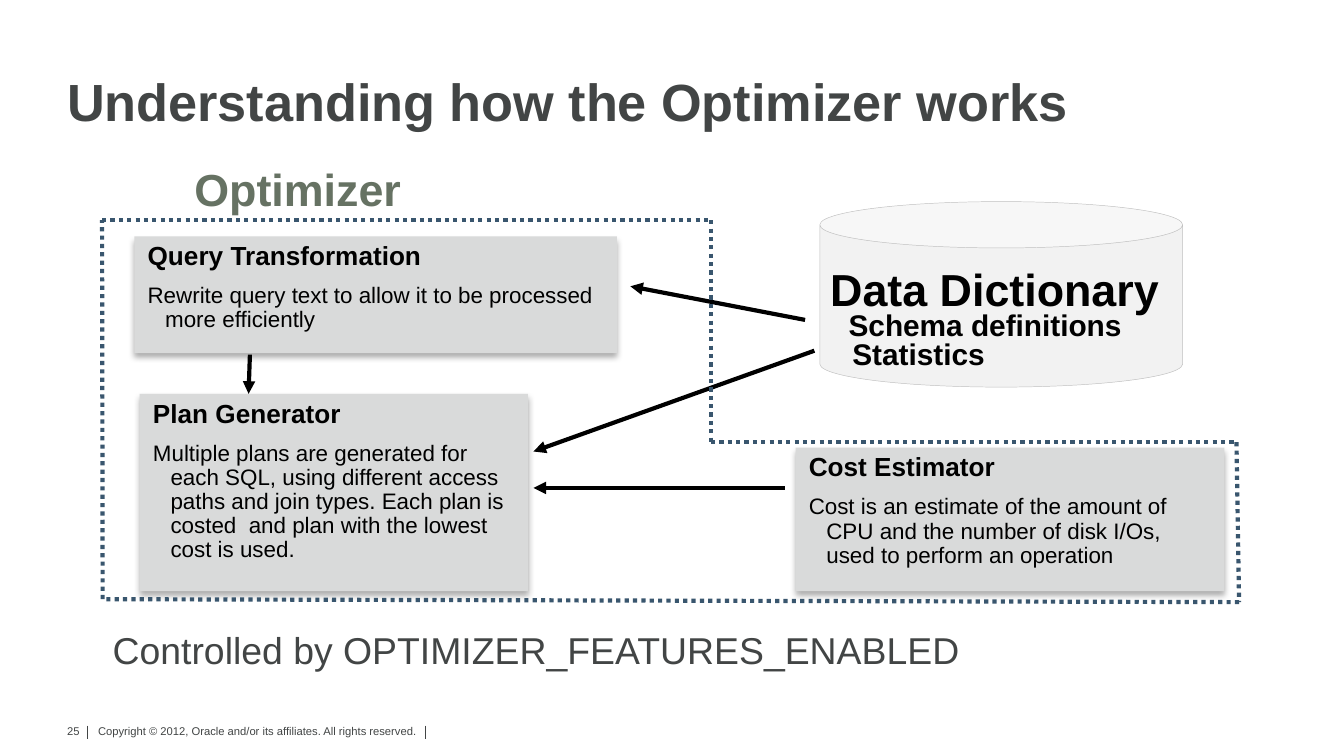
import itertools

import lxml.etree
import pptx
import pptx.dml.color
import pptx.enum.dml
import pptx.enum.shapes
import pptx.enum.text
import pptx.oxml
import pptx.oxml.ns
import pptx.util

Pt = pptx.util.Pt
RGBColor = pptx.dml.color.RGBColor
Align = pptx.enum.text.PP_ALIGN
Anchor = pptx.enum.text.MSO_ANCHOR
Shape = pptx.enum.shapes.MSO_SHAPE
qn = pptx.oxml.ns.qn

BLACK = RGBColor(0x00, 0x00, 0x00)
DARK_GRAY = RGBColor(0x42, 0x45, 0x45)
PANEL_GRAY = RGBColor(0xD9, 0xDA, 0xDA)
CAN_GRAY = RGBColor(0xC0, 0xC0, 0xC0)
SAGE = RGBColor(0x66, 0x72, 0x63)
BORDER_BLUE = RGBColor(0x39, 0x56, 0x6E)

SHADOW = (
    '<a:effectLst xmlns:a="http://schemas.openxmlformats.org/drawingml/2006/main">'
    '<a:outerShdw blurRad="44450" dist="27940" dir="5400000" rotWithShape="0">'
    '<a:srgbClr val="000000"><a:alpha val="32000"/></a:srgbClr>'
    "</a:outerShdw></a:effectLst>"
)

STEPS = [
    ((72, 126.7, 258.5, 62.6), "Query Transformation",
     "Rewrite query text to allow it to be processed more efficiently"),
    ((74.9, 211, 208, 105.8), "Plan Generator",
     "Multiple plans are generated for each SQL, using different access paths "
     "and join types. Each plan is costed  and plan with the lowest cost is used."),
    ((426.2, 239.8, 229.7, 77), "Cost Estimator",
     "Cost is an estimate of the amount of CPU and the number of disk I/Os, "
     "used to perform an operation"),
]
ARROWS = [
    ((133.9, 190), (133.2, 211)),
    ((420.5, 261.4), (285.8, 261.4)),
    ((436.3, 187.9), (285.8, 241.9)),
    ((431.3, 171.4), (337.7, 153.4)),
]
OPTIMIZER_CORNERS = [
    (54.7, 118), (380.9, 118), (380.9, 236.9), (662.4, 236.9), (663.8, 322.6), (55, 321),
]


def set_frame(frame, insets, anchor=Anchor.TOP):
    frame.word_wrap = True
    frame.vertical_anchor = anchor
    left, top, right, bottom = insets
    frame.margin_left, frame.margin_top = Pt(left), Pt(top)
    frame.margin_right, frame.margin_bottom = Pt(right), Pt(bottom)


def add_run(paragraph, text, size, color, bold=False):
    run = paragraph.add_run()
    run.text = text
    run.font.name = "Arial"
    run.font.size = Pt(size)
    run.font.bold = bold
    run.font.color.rgb = color


def add_text(slide, box, text, size, color, bold=False, align=Align.LEFT,
             spacing=1.0, insets=(7.2, 3.6, 7.2, 3.6), anchor=Anchor.TOP):
    shape = slide.shapes.add_textbox(*map(Pt, box))
    set_frame(shape.text_frame, insets, anchor)
    paragraph = shape.text_frame.paragraphs[0]
    paragraph.alignment = align
    paragraph.line_spacing = spacing
    add_run(paragraph, text, size, color, bold)


def add_step(slide, box, heading, description):
    shape = slide.shapes.add_shape(Shape.RECTANGLE, *map(Pt, box))
    shape.fill.solid()
    shape.fill.fore_color.rgb = PANEL_GRAY
    shape.line.fill.background()
    shape._element.spPr.append(pptx.oxml.parse_xml(SHADOW))
    frame = shape.text_frame
    set_frame(frame, (7.2, 3.6, 7.2, 3.6))
    heading_paragraph, description_paragraph = frame.paragraphs[0], frame.add_paragraph()
    for paragraph in frame.paragraphs:
        paragraph.alignment = Align.LEFT
        paragraph.line_spacing = 0.9
        properties = paragraph._p.get_or_add_pPr()
        properties.set("marL", str(Pt(9.4)))
        properties.set("indent", str(-Pt(9.4)))
    description_paragraph.space_before = Pt(7)
    add_run(heading_paragraph, heading, 14, BLACK, True)
    add_run(description_paragraph, description, 12, BLACK)


def add_dictionary(slide):
    shape = slide.shapes.add_shape(Shape.CAN, Pt(439.2), Pt(108), Pt(194.4), Pt(99.4))
    shape.shadow.inherit = False
    shape.adjustments[0] = 0.25
    shape.fill.solid()
    shape.fill.fore_color.rgb = CAN_GRAY
    color = shape._element.spPr.find(qn("a:solidFill"))[0]
    lxml.etree.SubElement(color, qn("a:alpha")).set("val", "20000")
    shape.line.color.rgb = CAN_GRAY
    shape.line.width = Pt(0.25)
    set_frame(shape.text_frame, (3.6, 7.2, 10.8, 3.6))
    paragraph = shape.text_frame.paragraphs[0]
    paragraph.alignment = Align.CENTER
    add_run(paragraph, "Data Dictionary", 24, BLACK, True)


def add_line(slide, start, end, color, width, dash=None, arrow=False):
    connector = slide.shapes.add_connector(
        pptx.enum.shapes.MSO_CONNECTOR.STRAIGHT, *map(Pt, start + end))
    connector.line.color.rgb = color
    connector.line.width = Pt(width)
    if dash is not None:
        connector.line.dash_style = dash
    if arrow:
        tail = lxml.etree.SubElement(connector.line._get_or_add_ln(), qn("a:tailEnd"))
        tail.set("type", "triangle")
    lxml.etree.SubElement(connector._element.spPr, qn("a:effectLst"))


def add_footer(slide):
    add_text(slide, (49.7, 386.6, 197.3, 17.3),
             "Copyright © 2012, Oracle and/or its affiliates. All rights reserved.",
             6, DARK_GRAY, insets=(2.9, 1.4, 2.9, 1.4))
    for x in (46.8, 228):
        add_line(slide, (x, 388.8), (x, 396), DARK_GRAY, 0.5)
    add_text(slide, (28.1, 384.5, 21.6, 14.4), "25", 6, DARK_GRAY,
             align=Align.RIGHT, insets=(0, 3.6, 7.2, 3.6))


def main():
    presentation = pptx.Presentation()
    presentation.slide_width, presentation.slide_height = Pt(720), Pt(405)
    slide = presentation.slides.add_slide(presentation.slide_layouts[6])
    add_footer(slide)
    add_text(slide, (36, 38.2, 648, 33.1), "Understanding how the Optimizer works",
             28, DARK_GRAY, True, spacing=0.9, insets=(0, 0, 0, 0), anchor=Anchor.BOTTOM)
    add_dictionary(slide)
    for box, heading, description in STEPS:
        add_step(slide, box, heading, description)
    for start, end in ARROWS:
        add_line(slide, start, end, BLACK, 2.25, arrow=True)
    closed_outline = OPTIMIZER_CORNERS + OPTIMIZER_CORNERS[:1]
    for start, end in itertools.pairwise(closed_outline):
        add_line(slide, start, end, BORDER_BLUE, 2.25,
                 dash=pptx.enum.dml.MSO_LINE.ROUND_DOT)
    for box, text, size, color in [
        ((52.6, 86.4, 213.8, 37.4), "Optimizer", 24, SAGE),
        ((443.5, 178.6, 97.2, 25.2), "Statistics", 16, BLACK),
        ((437.8, 162.7, 180, 25.2), "Schema definitions", 16, BLACK),
    ]:
        add_text(slide, box, text, size, color, True, Align.CENTER, 0.9)
    add_text(slide, (53.3, 332.6, 624.2, 31.7),
             "Controlled by OPTIMIZER_FEATURES_ENABLED", 20, DARK_GRAY)
    presentation.save("out.pptx")


if __name__ == "__main__":
    main()
